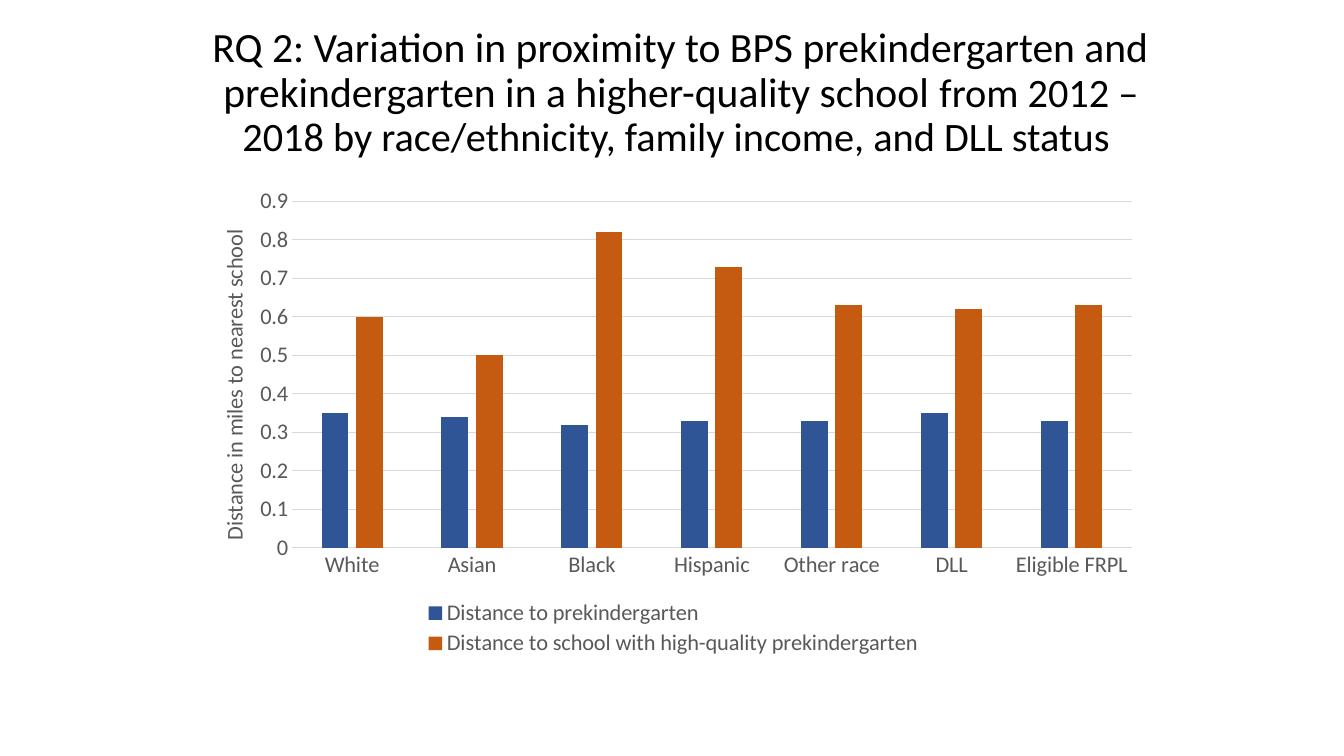
from lxml import etree
from pptx import Presentation
from pptx import util as u
from pptx.chart.data import CategoryChartData
from pptx.dml.color import RGBColor
from pptx.enum import chart as ch, text
from pptx.oxml.ns import qn

NAVY, RUST, GREY, RULE, BLACK = "2F5597", "C55A11", "595959", "D9D9D9", "000000"


def px(n):
    return u.Emu(round(n * 914400 / 100.8))


def rgb(code):
    return RGBColor.from_string(code)


class Deck:
    font = "Calibri"

    def __init__(self):
        self.prs = Presentation()
        self.prs.slide_width, self.prs.slide_height = px(1344), px(756)
        self.slide = self.prs.slides.add_slide(self.prs.slide_layouts[5])

    def style(self, font, size, color):
        font.name, font.size, font.bold = self.font, u.Pt(size), False
        font.color.rgb = rgb(color)

    def title(self, box, runs):
        shape = self.slide.shapes.title
        shape.left, shape.top, shape.width, shape.height = map(px, box)
        frame = shape.text_frame
        frame.word_wrap = True
        frame.auto_size = text.MSO_AUTO_SIZE.NONE
        frame.vertical_anchor = text.MSO_ANCHOR.MIDDLE
        para = frame.paragraphs[0]
        para.alignment, para.line_spacing = text.PP_ALIGN.CENTER, 0.9
        for words, size in runs:
            run = para.add_run()
            run.text = words
            self.style(run.font, size, BLACK)

    def place(self, part, after, **spots):
        """Fix a chart part at fractions of the chart's size."""
        for old in part.findall(qn("c:layout")):
            part.remove(old)
        layout = etree.Element(qn("c:layout"))
        manual = etree.SubElement(layout, qn("c:manualLayout"))
        if after is None:
            etree.SubElement(manual, qn("c:layoutTarget")).set("val", "inner")
        for axis in "xy":
            etree.SubElement(manual, qn(f"c:{axis}Mode")).set("val", "edge")
        for key, spot in spots.items():
            etree.SubElement(manual, qn(f"c:{key}")).set("val", str(spot))
        if after is None:
            part.insert(0, layout)
        else:
            part.find(qn(after)).addnext(layout)

    def bars(self, box, cats, series, label):
        data = CategoryChartData()
        data.categories = cats
        for name, vals, _ in series:
            data.add_series(name, vals)
        chart = self.slide.shapes.add_chart(
            ch.XL_CHART_TYPE.COLUMN_CLUSTERED, *map(px, box), data).chart
        chart.has_title = False
        self.style(chart.font, 16, GREY)

        # Columns
        plot = chart.plots[0]
        plot.gap_width, plot.overlap, plot.vary_by_categories = 219, -27, False
        for bar, (_, _, color) in zip(plot.series, series):
            bar.format.fill.solid()
            bar.format.fill.fore_color.rgb = rgb(color)

        # Axes
        cat, val = chart.category_axis, chart.value_axis
        for axis in (cat, val):
            axis.major_tick_mark = axis.minor_tick_mark = ch.XL_TICK_MARK.NONE
            self.style(axis.tick_labels.font, 16, GREY)
        for line in (cat.format.line, val.major_gridlines.format.line):
            line.color.rgb, line.width = rgb(RULE), u.Pt(0.75)
        val.format.line.fill.background()
        val.minimum_scale, val.maximum_scale, val.major_unit = 0, 0.9, 0.1
        frame = val.axis_title.text_frame
        frame.text = label
        self.style(frame.paragraphs[0].font, 16, GREY)

        # Legend
        chart.has_legend = True
        key = chart.legend
        key.position, key.include_in_layout = ch.XL_LEGEND_POSITION.BOTTOM, False
        self.style(key.font, 16, GREY)

        # Layout
        area = val._element.getparent()
        self.place(area, None, x=0.11, y=0.05, w=0.87, h=0.71)
        self.place(val.axis_title._element, "c:tx", x=0.03, y=0.1)
        self.place(key._element, "c:legendPos", x=0.24, y=0.86, w=0.53, h=0.13)


def main():
    deck = Deck()
    deck.title((186, 20, 990, 146), [
        ("RQ 2: Variation in proximity to BPS prekindergarten and "
         "prekindergarten in a higher-quality school ", 29.7),
        ("from 2012 – 2018 by race/ethnicity, family income, "
         "and DLL status ", 28.8)])
    deck.bars(
        (186, 177, 965, 488),
        ["White", "Asian", "Black", "Hispanic", "Other race", "DLL", "Eligible FRPL"],
        [("Distance to prekindergarten",
          (0.35, 0.34, 0.32, 0.33, 0.33, 0.35, 0.33), NAVY),
         ("Distance to school with high-quality prekindergarten",
          (0.6, 0.5, 0.82, 0.73, 0.63, 0.62, 0.63), RUST)],
        "Distance in miles to nearest school")
    deck.prs.save("out.pptx")


if __name__ == "__main__":
    main()
